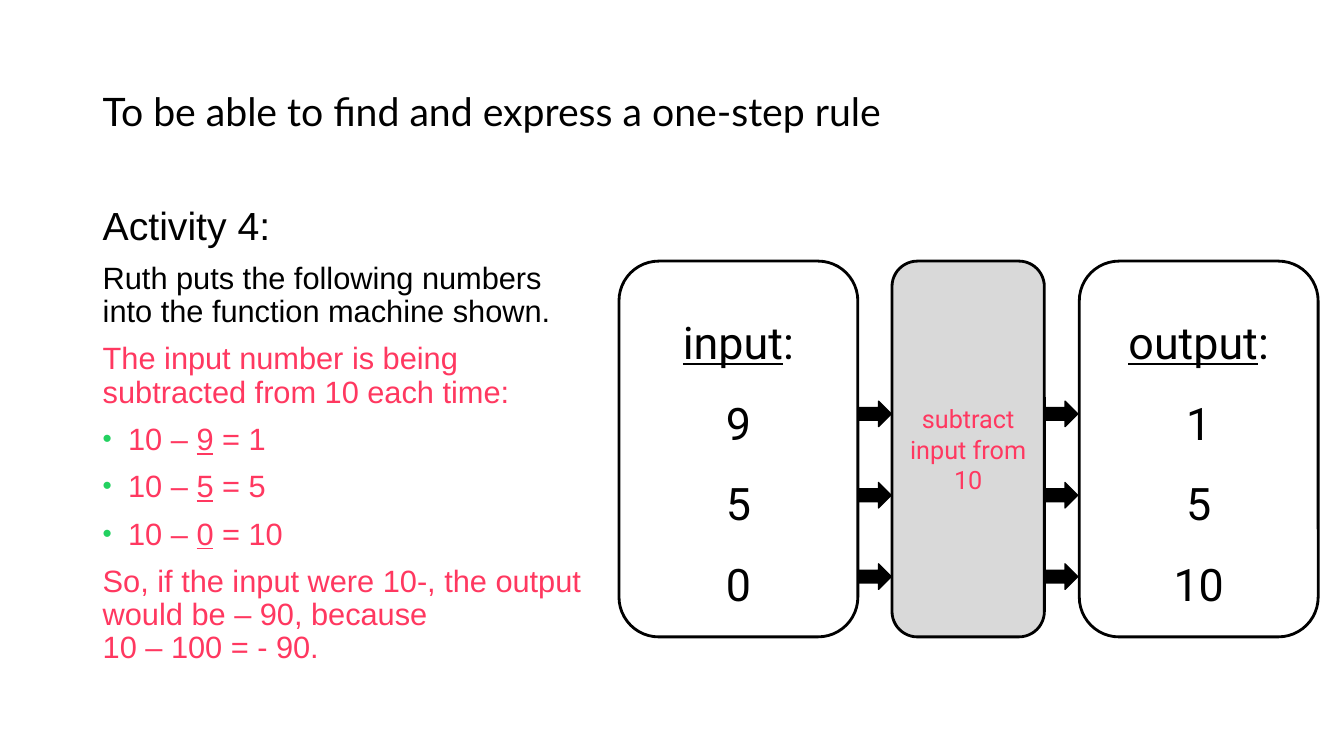
import dataclasses

import lxml.etree
import pptx
import pptx.dml.color
import pptx.enum.shapes
import pptx.enum.text
import pptx.oxml.ns
import pptx.util

Cm = pptx.util.Cm
Pt = pptx.util.Pt
Shape = pptx.enum.shapes.MSO_SHAPE
Align = pptx.enum.text.PP_ALIGN
Anchor = pptx.enum.text.MSO_ANCHOR


@dataclasses.dataclass(frozen=True)
class Theme:
    ink: str = "000000"
    paper: str = "FFFFFF"
    answer: str = "FF3860"
    bullet: str = "23D160"
    rule_fill: str = "D9D9D9"
    title_font: str = "Lato"
    body_font: str = "Arial"
    machine_font: str = "Roboto"
    heading_size: int = 28
    body_size: int = 22
    number_size: int = 32
    rule_size: int = 18


def rgb(colour):
    return pptx.dml.color.RGBColor.from_string(colour)


class FunctionMachineSlide:
    def __init__(self, presentation, theme):
        self.theme = theme
        self.slide = presentation.slides.add_slide(presentation.slide_layouts[6])

    def text_box(self, left, top, width, height, anchor=Anchor.TOP):
        frame = self.slide.shapes.add_textbox(
            Cm(left), Cm(top), Cm(width), Cm(height)).text_frame
        frame.word_wrap = True
        frame.vertical_anchor = anchor
        return frame

    def shape(self, kind, left, top, width, height, fill, line_width):
        block = self.slide.shapes.add_shape(
            kind, Cm(left), Cm(top), Cm(width), Cm(height))
        block.shadow.inherit = False
        block.fill.solid()
        block.fill.fore_color.rgb = rgb(fill)
        block.line.color.rgb = rgb(self.theme.ink)
        block.line.width = Pt(line_width)
        frame = block.text_frame
        frame.word_wrap = True
        frame.vertical_anchor = Anchor.MIDDLE
        return frame

    def paragraph(self, frame, runs, font, size, colour,
                  align=Align.LEFT, spacing=0.9, before=0):
        """Each run is (text, underlined); None stands for a line break."""
        first = frame.paragraphs[0]
        is_first = not first.runs
        paragraph = first if is_first else frame.add_paragraph()
        paragraph.alignment = align
        paragraph.line_spacing = spacing
        paragraph.space_before = Pt(0 if is_first else before)
        for part in runs:
            if part is None:
                paragraph.add_line_break()
                continue
            run = paragraph.add_run()
            run.text, run.font.underline = part
            run.font.name = font
            run.font.size = Pt(size)
            run.font.color.rgb = rgb(colour)
        return paragraph

    def bullet(self, paragraph):
        properties = paragraph._p.get_or_add_pPr()
        indent = Cm(0.64)
        properties.set("marL", str(indent))
        properties.set("indent", str(-indent))
        qn = pptx.oxml.ns.qn
        colour = lxml.etree.SubElement(properties, qn("a:buClr"))
        lxml.etree.SubElement(colour, qn("a:srgbClr"), val=self.theme.bullet)
        lxml.etree.SubElement(properties, qn("a:buSzPct"), val="85000")
        lxml.etree.SubElement(properties, qn("a:buFont"), typeface="Arial")
        lxml.etree.SubElement(properties, qn("a:buChar"), char="•")

    def number_panel(self, left, top, width, height, label, numbers):
        theme = self.theme
        frame = self.shape(Shape.ROUNDED_RECTANGLE, left, top, width, height,
                           theme.paper, 2)
        rows = [[(label, True), (":", False)]]
        rows += [[(number, False)] for number in numbers]
        for runs in rows:
            self.paragraph(frame, runs, theme.machine_font, theme.number_size,
                           theme.ink, Align.CENTER, 1.5)


def main():
    presentation = pptx.Presentation()
    presentation.slide_width = Cm(33.87)
    presentation.slide_height = Cm(19.05)
    theme = Theme()
    page = FunctionMachineSlide(presentation, theme)

    # Title
    title = page.text_box(2.34, 1.02, 24.38, 3.68, Anchor.MIDDLE)
    page.paragraph(title, [("To be able to find and express a one-step rule", False)],
                   theme.title_font, theme.heading_size, theme.ink)

    # Activity and worked answer
    activity = page.text_box(2.34, 5.08, 12.78, 12.09)

    def say(runs, colour, size=theme.body_size):
        return page.paragraph(activity, runs, theme.body_font, size, colour, before=10)

    say([("Activity 4:", False)], theme.ink, theme.heading_size)
    say([("Ruth puts the following numbers into the function machine shown.", False)],
        theme.ink)
    say([("The input number is being subtracted from 10 each time:", False)],
        theme.answer)
    inputs, outputs = ["9", "5", "0"], ["1", "5", "10"]
    for number, result in zip(inputs, outputs):
        page.bullet(say([("10 – ", False), (number, True), (f" = {result}", False)],
                        theme.answer))
    say([("So, if the input were 10-, the output would be – 90, because", False), None,
         ("10 – 100 = - 90.", False)], theme.answer)

    # Input and output panels
    top, height, panel_width = 6.58, 9.47, 6.02
    for left, label, numbers in ((15.6, "input", inputs), (27.2, "output", outputs)):
        page.number_panel(left, top, panel_width, height, label, numbers)

    # Arrows beside each number
    for row in range(len(inputs)):
        for left in (21.62, 26.32):
            page.shape(Shape.RIGHT_ARROW, left, 10.11 + 2.05 * row, 0.84, 0.64,
                       theme.ink, 1)

    # Rule in the middle of the machine
    rule = page.shape(Shape.ROUNDED_RECTANGLE, 22.48, top, 3.84, height,
                      theme.rule_fill, 2)
    page.paragraph(rule, [("subtract input from 10", False)], theme.machine_font,
                   theme.rule_size, theme.answer, Align.CENTER, 1.0)

    presentation.save("out.pptx")


if __name__ == "__main__":
    main()
